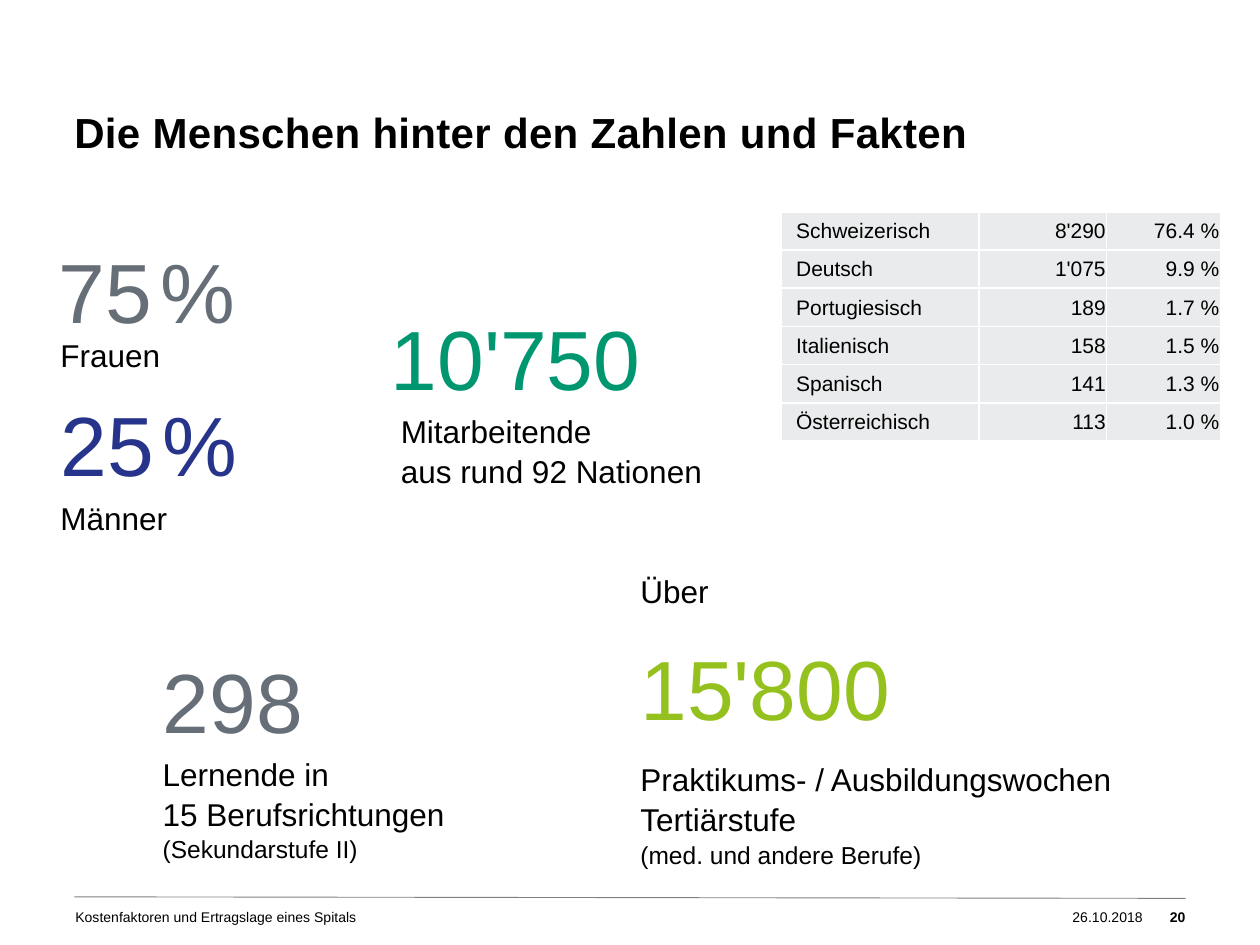
"""Builds the slide with the staff figures of a hospital."""
import lxml.etree
import pptx
import pptx.dml.color
import pptx.enum.shapes
import pptx.enum.text
import pptx.oxml.ns
import pptx.util

Cm = pptx.util.Cm
Pt = pptx.util.Pt
qn = pptx.oxml.ns.qn
RIGHT = pptx.enum.text.PP_ALIGN.RIGHT
COLORS = {
    "black": "000000", "white": "FFFFFF", "rule": "808080", "cell": "EAEBEC",
    "grey": "666F77", "blue": "27348B", "teal": "009770", "green": "95C11F",
}

presentation = pptx.Presentation()
presentation.slide_width = Cm(25.4)
presentation.slide_height = Cm(19.05)
slide = presentation.slides.add_slide(presentation.slide_layouts[6])


def add_box(left, top, width, height, margin=0.13):
    box = slide.shapes.add_textbox(Cm(left), Cm(top), Cm(width), Cm(height))
    frame = box.text_frame
    frame.word_wrap = True
    frame.margin_left = frame.margin_right = Cm(margin)
    frame.margin_top = frame.margin_bottom = Cm(margin)
    return frame


def add_text(paragraph, text, size=18, color="black", bold=False, align=None,
             spacing=1.06, before=0, tracking=0):
    if align is not None:
        paragraph.alignment = align
    paragraph.line_spacing = spacing
    if before:
        paragraph.space_before = Pt(before)
    run = paragraph.add_run()
    run.text = text
    run.font.name = "Arial"
    run.font.size = Pt(size)
    run.font.bold = bold
    run.font.color.rgb = pptx.dml.color.RGBColor.from_string(COLORS[color])
    if tracking:
        run.font._element.set("spc", str(tracking))


rule = slide.shapes.add_connector(
    pptx.enum.shapes.MSO_CONNECTOR.STRAIGHT, Cm(1.5), Cm(18.08), Cm(23.9), Cm(18.11))
rule.line.color.rgb = pptx.dml.color.RGBColor.from_string(COLORS["rule"])
rule.line.width = Pt(0.5)
lxml.etree.SubElement(rule._element.spPr, qn("a:effectLst"))

footers = [
    ("Kostenfaktoren und Ertragslage eines Spitals", 1.52, 18.21, False, None),
    ("26.10.2018", 21.62, 1.8, False, None),
    ("20", 23.22, 0.68, True, RIGHT),
]
for text, left, width, bold, align in footers:
    footer = add_box(left, 18.31, width, 0.7, margin=0)
    add_text(footer.paragraphs[0], text, size=8, bold=bold, align=align, spacing=1)

title = add_box(1.5, 2.08, 22.4, 2.2, margin=0)
add_text(title.paragraphs[0], "Die Menschen hinter den Zahlen und Fakten",
         size=24, bold=True, tracking=20)

nationalities = [
    ("Schweizerisch", "8'290", "76.4 %"),
    ("Deutsch", "1'075", "9.9 %"),
    ("Portugiesisch", "189", "1.7 %"),
    ("Italienisch", "158", "1.5 %"),
    ("Spanisch", "141", "1.3 %"),
    ("Österreichisch", "113", "1.0 %"),
]
column_widths = [3.99, 2.57, 2.29]
row_height = 0.77
table = slide.shapes.add_table(
    len(nationalities), len(column_widths), Cm(15.75), Cm(4.27),
    Cm(sum(column_widths)), Cm(row_height * len(nationalities))).table
table.first_row = False
table.horz_banding = False
for column, width in zip(table.columns, column_widths):
    column.width = Cm(width)
for row_index, values in enumerate(nationalities):
    table.rows[row_index].height = Cm(row_height)
    for column_index, value in enumerate(values):
        cell = table.cell(row_index, column_index)
        cell.vertical_anchor = pptx.enum.text.MSO_ANCHOR.MIDDLE
        cell.margin_left = Cm(0.02 if column_index else 0.3)
        cell.margin_right = cell.margin_top = Cm(0.02)
        cell.margin_bottom = Cm(0)
        properties = cell._tc.get_or_add_tcPr()
        for side in ("a:lnL", "a:lnR", "a:lnT", "a:lnB"):
            border = lxml.etree.SubElement(properties, qn(side), w=str(Pt(1)))
            fill = lxml.etree.SubElement(border, qn("a:solidFill"))
            lxml.etree.SubElement(fill, qn("a:srgbClr"), val=COLORS["white"])
        cell.fill.solid()
        cell.fill.fore_color.rgb = pptx.dml.color.RGBColor.from_string(COLORS["cell"])
        add_text(cell.text_frame.paragraphs[0], value, size=12, spacing=1,
                 align=RIGHT if column_index else None)

figures = [
    ("10'750", 7.75, 5.92, 6.4, "teal"),
    ("298", 3.15, 12.85, 3.58, "grey"),
]
for text, left, top, width, color in figures:
    figure = add_box(left, top, width, 2.3)
    add_text(figure.paragraphs[0], text, size=48, color=color)

shares = [
    ("75", "Frauen", 1.05, 4.57, 6.6, "grey"),
    ("25", "Männer", 1.09, 7.67, 9.88, "blue"),
]
for number, label, left, top, label_top, color in shares:
    share = add_box(left, top, 4.4, 2.3).paragraphs[0]
    for text, size in ((number, 48), (" ", 18), ("%", 48)):
        add_text(share, text, size=size, color=color)
    add_text(add_box(1.09, label_top, 3.07, 1.02).paragraphs[0], label)

captions = [
    (7.95, 8.13, 6.5, 1.8, [
        ("Mitarbeitende", {}),
        ("aus rund 92 Nationen", {}),
    ]),
    (3.15, 15.04, 6.53, 2.39, [
        ("Lernende in", {}),
        ("15 Berufsrichtungen", {}),
        ("(Sekundarstufe II)", {"size": 14}),
    ]),
    (12.78, 11.35, 9.98, 6.02, [
        ("Über", {}),
        ("15'800", {"size": 48, "color": "green", "before": 12}),
        ("Praktikums- / Ausbildungswochen Tertiärstufe", {"before": 12}),
        ("(med. und andere Berufe)", {"size": 14}),
    ]),
]
for left, top, width, height, lines in captions:
    caption = add_box(left, top, width, height)
    for index, (text, text_format) in enumerate(lines):
        paragraph = caption.add_paragraph() if index else caption.paragraphs[0]
        add_text(paragraph, text, **text_format)

presentation.save("out.pptx")
